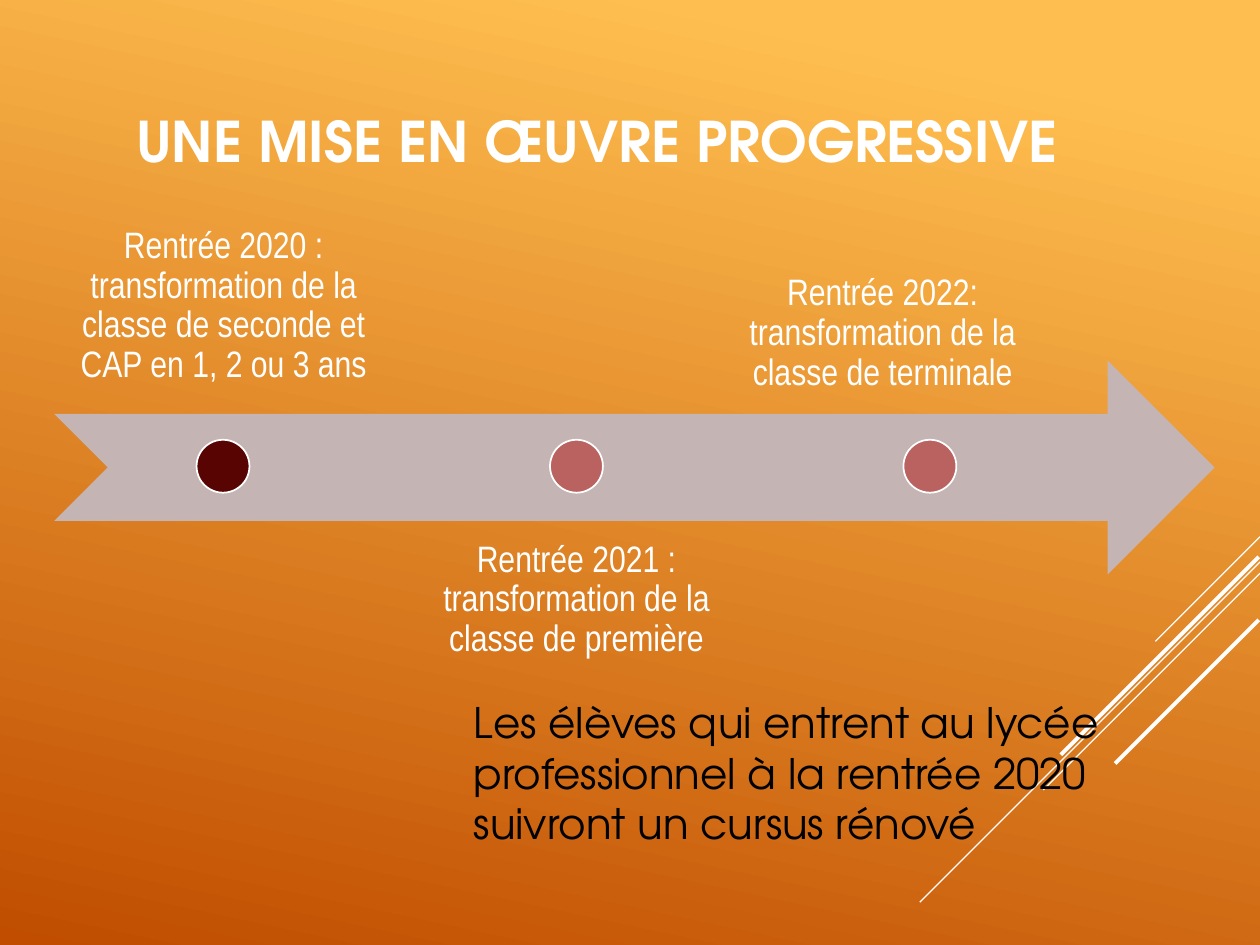
from lxml.etree import SubElement
from pptx import Presentation
from pptx.dml.color import RGBColor
from pptx.enum.shapes import MSO_CONNECTOR as Connector, MSO_SHAPE as Shape
from pptx.enum.text import MSO_ANCHOR as Anchor, MSO_AUTO_SIZE as AutoSize, PP_ALIGN as Align
from pptx.oxml.ns import qn
from pptx.util import Inches, Pt


def color(value):
    return RGBColor.from_string(value)


def write(box, text, font, size, ink, frame_format, para_format, bold=False):
    frame = box.text_frame
    frame.word_wrap = True
    frame.auto_size = AutoSize.NONE
    for name, value in frame_format.items():
        setattr(frame, name, value)
    para = frame.paragraphs[0]
    for name, value in para_format.items():
        setattr(para, name, value)
    span = para.add_run()
    span.text = text
    for name, value in {"name": font, "size": Pt(size), "bold": bold}.items():
        setattr(span.font, name, value)
    span.font.color.rgb = color(ink)
    return para


deck = Presentation()
deck.slide_width, deck.slide_height = Inches(10), Inches(7.5)
page = deck.slides.add_slide(deck.slide_layouts[1])
title, body = page.placeholders

background = page.background.fill
background.gradient()
background.gradient_angle = 258
for stop, value, position in zip(background.gradient_stops, ["FFBF50", "C04D00"], [0.1, 1]):
    stop.color.rgb = color(value)
    stop.position = position

rays = [
    (10, 4.26, 0.83, 0.75),
    (10, 4.46, 2.7, 0.75),
    (10, 4.55, 1.72, 0.75),
    (9.99, 4.42, 1.57, 2.25),
    (9.99, 4.92, 1.14, 2.25),
]
for index, (x, y, run, weight) in enumerate(rays):
    ray = page.shapes.add_connector(
        Connector.STRAIGHT, Inches(x), Inches(y), Inches(x - run), Inches(y + run)
    )
    ray.line.color.rgb = color("FFFFFF")
    ray.line.width = Pt(weight)
    SubElement(ray._element.spPr, qn("a:effectLst"))
    page.shapes._spTree.insert(2 + index, ray._element)

places = [(title, 0.98, 0.6, 8.11, 0.83), (body, 3.66, 5.48, 5.47, 1.65)]
for holder, *place in places:
    holder.left, holder.top, holder.width, holder.height = map(Inches, place)

write(title, "UNE MISE EN ŒUVRE PROGRESSIVE", "TeX Gyre Adventor", 32, "FFFFFF",
      {"vertical_anchor": Anchor.BOTTOM}, {"alignment": Align.LEFT}, bold=True)
message = write(
    body,
    "Les élèves qui entrent au lycée professionnel à la rentrée 2020 suivront un cursus rénové",
    "TeX Gyre Adventor", 24, "000000",
    {"vertical_anchor": Anchor.TOP},
    {"alignment": Align.LEFT, "space_before": Pt(4.8), "space_after": Pt(6)},
)
properties = message._p.get_or_add_pPr()
for name in ("marL", "indent"):
    properties.set(name, "0")
SubElement(properties, qn("a:buNone"))

arrow = page.shapes.add_shape(
    Shape.NOTCHED_RIGHT_ARROW, Inches(0.43), Inches(2.86), Inches(9.21), Inches(1.7)
)
arrow.shadow.inherit = False
arrow.fill.solid()
arrow.fill.fore_color.rgb = color("C4B4B4")
arrow.line.fill.background()

steps = [
    ("Rentrée 2020 : transformation de la classe de seconde et CAP en 1, 2 ou 3 ans",
     0.44, 1.58, Anchor.MIDDLE, "570402"),
    ("Rentrée 2021 : transformation de la classe de première",
     3.24, 4.13, Anchor.TOP, "B96260"),
    ("Rentrée 2022: transformation de la classe de terminale",
     5.67, 1.58, Anchor.BOTTOM, "B96260"),
]
margins = ("margin_left", "margin_top", "margin_right", "margin_bottom")
label_frame = {name: Inches(0.16) for name in margins}
label_para = {"alignment": Align.CENTER, "line_spacing": 0.9, "space_after": Pt(7.35)}
for index, (text, left, top, anchor, fill) in enumerate(steps):
    label = page.shapes.add_textbox(Inches(left), Inches(top), Inches(2.67), Inches(1.7))
    write(label, text, "Arial Narrow", 21, "FFFFFF",
          {**label_frame, "vertical_anchor": anchor}, label_para)
    dot = page.shapes.add_shape(
        Shape.OVAL, Inches(1.56 + 2.805 * index), Inches(3.49), Inches(0.42), Inches(0.42)
    )
    dot.shadow.inherit = False
    dot.fill.solid()
    dot.fill.fore_color.rgb = color(fill)
    dot.line.color.rgb = color("FFFFFF")
    dot.line.width = Pt(1)

deck.save("out.pptx")
